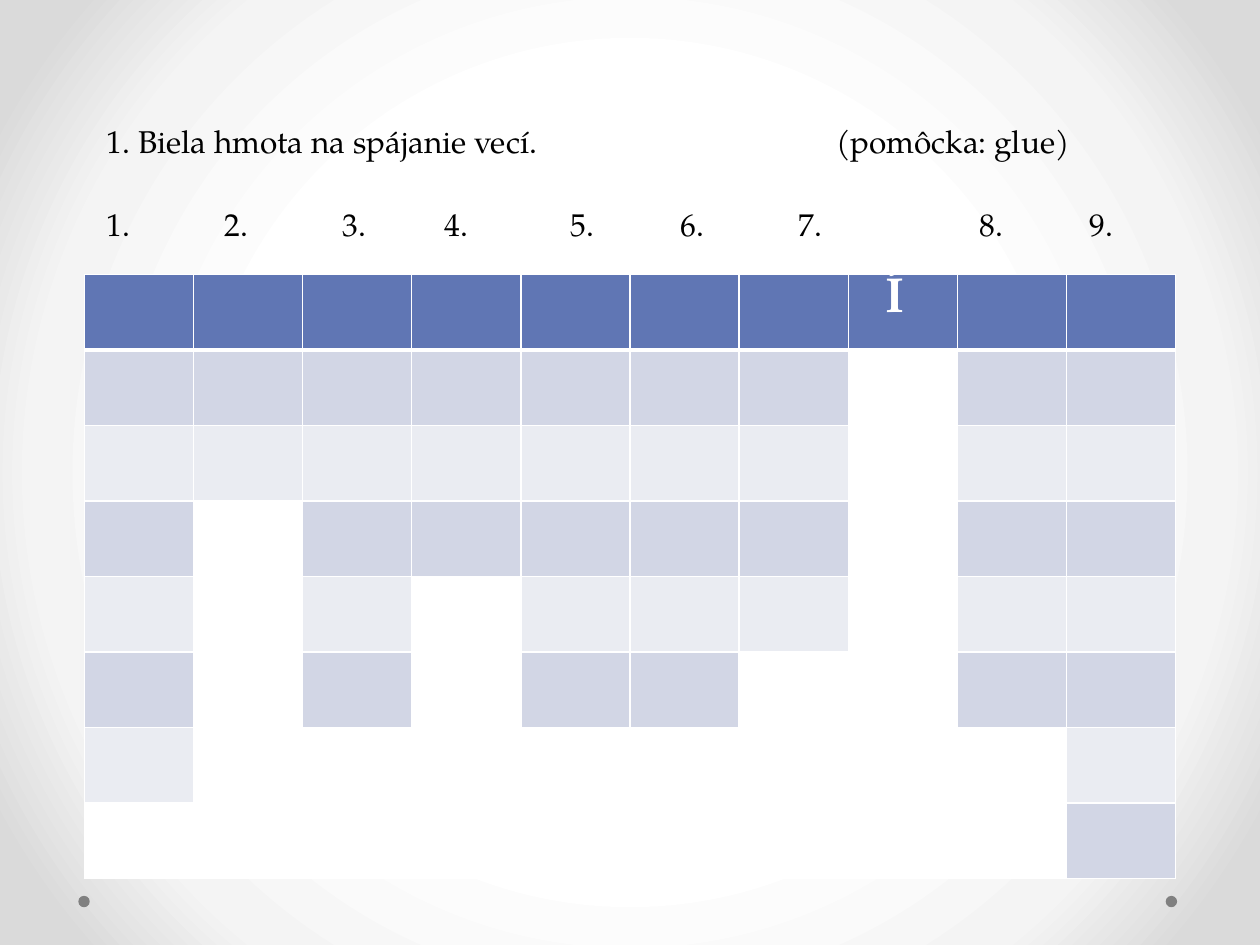
"""Build a crossword slide with a clue, column numbers and a letter grid."""
from dataclasses import dataclass

from lxml.etree import SubElement
from pptx import Presentation
from pptx.dml.color import RGBColor
from pptx.enum.shapes import MSO_SHAPE
from pptx.enum.text import MSO_ANCHOR, MSO_AUTO_SIZE, PP_ALIGN
from pptx.oxml import parse_xml
from pptx.oxml.ns import nsdecls, qn
from pptx.util import Cm, Pt


@dataclass(frozen=True)
class Theme:
    font: str = "TeX Gyre Pagella"
    text: str = "000000"
    white: str = "FFFFFF"
    header: str = "6076B4"
    bands: tuple = ("EAECF2", "D2D6E5")
    dot: str = "808080"
    glow: tuple = ((50, "FFFFFF"), (76, "F4F4F4"), (92, "DADADA"))
    body_size: int = 18
    letter_size: int = 28
    line: int = 1
    header_line: int = 3


class Deck:
    def __init__(self, prs, theme):
        self.prs, self.theme, self.s = prs, theme, None

    def slide(self):
        self.s = self.prs.slides.add_slide(self.prs.slide_layouts[5])
        self.s.background.fill.gradient()
        grad = next(self.s.element.iter(qn("a:gradFill")))
        for child in list(grad):
            grad.remove(child)
        stops = SubElement(grad, qn("a:gsLst"))
        for pos, color in self.theme.glow:
            gs = SubElement(stops, qn("a:gs"), pos=str(pos * 1000))
            SubElement(gs, qn("a:srgbClr"), val=color)
        shade = SubElement(grad, qn("a:path"), path="circle")
        SubElement(shade, qn("a:fillToRect"), {side: "50000" for side in "ltrb"})

    def run(self, p, text, size, color, bold=False):
        r = p.add_run()
        r.text = text
        r.font.name, r.font.size, r.font.bold = self.theme.font, Pt(size), bold
        r.font.color.rgb = RGBColor.from_string(color)

    def tabbed(self, sp, box, first, stops):
        sp.left, sp.top, sp.width, sp.height = (Cm(v) for v in box)
        tf = sp.text_frame
        tf.word_wrap, tf.auto_size = True, MSO_AUTO_SIZE.NONE
        tf.vertical_anchor = MSO_ANCHOR.TOP
        p = tf.paragraphs[0]
        p.alignment = PP_ALIGN.LEFT
        tabs = SubElement(p._p.get_or_add_pPr(), qn("a:tabLst"))
        self.run(p, first, self.theme.body_size, self.theme.text)
        for pos, label in stops:
            SubElement(tabs, qn("a:tab"), pos=str(Cm(pos)), algn="l")
            self.run(p, "\t" + label, self.theme.body_size, self.theme.text)

    def title(self, box, first, stops):
        self.tabbed(self.s.shapes.title, box, first, stops)

    def text(self, box, first, stops):
        sp = self.s.shapes.add_textbox(0, 0, 0, 0)
        self.tabbed(sp, box, first, stops)

    def dot(self, x, y, size):
        sp = self.s.shapes.add_shape(MSO_SHAPE.OVAL, Cm(x), Cm(y), Cm(size), Cm(size))
        sp.shadow.inherit = False
        sp.fill.solid()
        sp.fill.fore_color.rgb = RGBColor.from_string(self.theme.dot)
        sp.line.fill.background()

    def borders(self, cell, top, bottom):
        tcPr = cell._tc.get_or_add_tcPr()
        line = self.theme.line
        sides = (("L", line), ("R", line), ("T", top), ("B", bottom))
        for i, (side, width) in enumerate(sides):
            tcPr.insert(i, parse_xml(
                f'<a:ln{side} {nsdecls("a")} w="{Pt(width)}"><a:solidFill>'
                f'<a:srgbClr val="{self.theme.white}"/></a:solidFill></a:ln{side}>'))

    def grid(self, box, rows, lengths):
        t = self.theme
        frame = self.s.shapes.add_table(rows, len(lengths), *(Cm(v) for v in box))
        table = frame.table
        for row in range(rows):
            color = t.bands[row % 2] if row else t.header
            top = t.header_line if row == 1 else t.line
            bottom = t.line if row else t.header_line
            for col, length in enumerate(lengths):
                cell = table.cell(row, col)
                cell.fill.solid()
                cell.fill.fore_color.rgb = RGBColor.from_string(
                    color if row < length else t.white)
                self.borders(cell, top, bottom)
        return table

    def letter(self, cell, text):
        cell.margin_left, cell.margin_top = Cm(0.76), Cm(0.05)
        p = cell.text_frame.paragraphs[0]
        self.run(p, text, self.theme.letter_size, self.theme.white, bold=True)


def main():
    prs = Presentation()
    prs.slide_width, prs.slide_height = Cm(25.4), Cm(19.05)
    deck = Deck(prs, Theme())
    deck.slide()
    for x in (23.5, 1.58):
        deck.dot(x, 18.06, 0.23)
    table = deck.grid((1.7, 5.53, 22, 12.19), 8, (7, 3, 6, 4, 6, 6, 5, 1, 6, 8))
    deck.letter(table.cell(0, 7), "Í")
    stops = (2.38, 4.76, 6.81, 9.35, 11.57, 13.95, 17.6, 19.81)
    deck.text((1.9, 4.01, 21.51, 1.02), "1.",
              [(pos, f"{n}.") for n, pos in enumerate(stops, 2)])
    deck.title((1.9, 2.33, 20.12, 1.02), "1. Biela hmota na spájanie vecí.",
               [(14.7, "(pomôcka: glue)")])
    prs.save("out.pptx")


if __name__ == "__main__":
    main()
